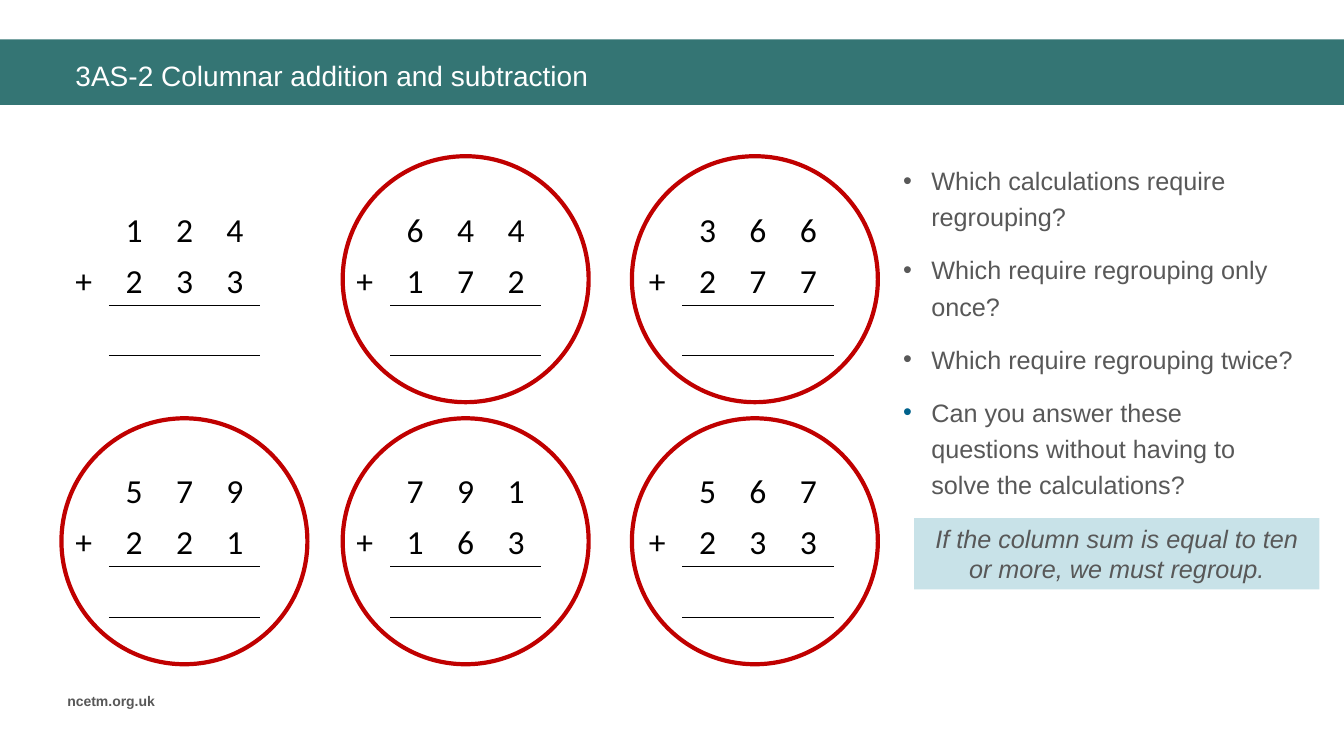
import pptx
import pptx.dml.color
import pptx.enum.shapes
import pptx.enum.text
import pptx.oxml
import pptx.oxml.ns
import pptx.util

Pt = pptx.util.Pt
ALIGN = pptx.enum.text.PP_ALIGN
MIDDLE = pptx.enum.text.MSO_ANCHOR.MIDDLE
SHAPE = pptx.enum.shapes.MSO_SHAPE
NS = pptx.oxml.ns.nsdecls("a")

COLORS = {
    "banner": "347574", "white": "FFFFFF", "grey": "585858", "black": "000000",
    "ring": "C00000", "callout": "C8E2E8", "blue": "00628C",
}
PLAIN_TABLE_STYLE = "{2D5ABB26-0587-4C30-8999-92F81FD0307C}"
CELL = 36
RING = 175.7

# Left edges of each column: the sum table and the ring around it
COLUMNS = [(41.8, 43.9), (242.6, 244.8), (451.4, 451.4)]
# Top edges of each row: the sum table and the ring around it
ROWS = [(146.2, 111.6), (332.8, 298.8)]
# Upper number, lower number, ringed when regrouping is needed
SUMS = [
    [("124", "233", False), ("644", "172", True), ("366", "277", True)],
    [("579", "221", True), ("791", "163", True), ("567", "233", True)],
]
QUESTIONS = [
    ("Which calculations require regrouping?", "grey"),
    ("Which require regrouping only once?", "grey"),
    ("Which require regrouping twice?", "grey"),
    ("Can you answer these questions without having to solve the calculations?", "blue"),
]


def rgb(name):
    return pptx.dml.color.RGBColor.from_string(COLORS[name])


def write(para, text, size=18, font="Arial", color="grey", bold=False, italic=False,
          align=ALIGN.LEFT, spacing=None, before=0, after=0):
    para.alignment = align
    para.line_spacing = spacing
    para.space_before, para.space_after = Pt(before), Pt(after)
    span = para.add_run()
    span.text = text
    span.font.size, span.font.name = Pt(size), font
    span.font.bold, span.font.italic = bold, italic
    span.font.color.rgb = rgb(color)


def add_text_box(page, left, top, width, height, anchor=pptx.enum.text.MSO_ANCHOR.TOP):
    frame = page.shapes.add_textbox(Pt(left), Pt(top), Pt(width), Pt(height)).text_frame
    frame.word_wrap = True
    frame.vertical_anchor = anchor
    return frame


def add_shape(page, kind, left, top, width, height, fill=None, line=None):
    shape = page.shapes.add_shape(kind, Pt(left), Pt(top), Pt(width), Pt(height))
    shape.shadow.inherit = False
    if fill:
        shape.fill.solid()
        shape.fill.fore_color.rgb = rgb(fill)
    else:
        shape.fill.background()
    if line:
        shape.line.color.rgb = rgb(line)
        shape.line.width = Pt(3)
    else:
        shape.line.fill.background()
    return shape


def add_banner(page, left, top, width, height):
    add_shape(page, SHAPE.RECTANGLE, left, top, width, height, fill="banner")
    title = add_text_box(page, left + 46.8, top + 8.6, width - 73, 33.8, MIDDLE)
    write(title.paragraphs[0], "3AS-2 Columnar addition and subtraction", size=20, color="white")


def add_border(cell, side):
    cell._tc.get_or_add_tcPr().append(pptx.oxml.parse_xml(
        f'<a:{side} {NS} w="{Pt(1)}"><a:solidFill><a:srgbClr val="{COLORS["black"]}"/>'
        f'</a:solidFill></a:{side}>'))


def add_sum(page, left, top, upper, lower):
    """Place a column addition with ruled lines above and below its answer row."""
    rows = [" " + upper, "+" + lower, " " * 4]
    table = page.shapes.add_table(3, 4, Pt(left), Pt(top), Pt(4 * CELL), Pt(3 * CELL)).table
    table.first_row = table.horz_banding = False
    table._tbl.tblPr.find(pptx.oxml.ns.qn("a:tableStyleId")).text = PLAIN_TABLE_STYLE
    for r, marks in enumerate(rows):
        table.rows[r].height = Pt(CELL)
        for c, mark in enumerate(marks):
            table.columns[c].width = Pt(CELL)
            cell = table.cell(r, c)
            cell.margin_left = cell.margin_right = Pt(5)
            cell.margin_top = cell.margin_bottom = 0
            cell.vertical_anchor = MIDDLE
            if c > 0 and r == 2:
                add_border(cell, "lnT")
            if c > 0 and r > 0:
                add_border(cell, "lnB")
            cell.fill.background()
            if mark.strip():
                write(cell.text_frame.paragraphs[0], mark, size=24, font="Calibri",
                      color="black", align=ALIGN.CENTER, spacing=1.07)


def add_sums(page):
    for (table_top, ring_top), sums in zip(ROWS, SUMS):
        for (table_left, ring_left), (upper, lower, ringed) in zip(COLUMNS, sums):
            if ringed:
                add_shape(page, SHAPE.OVAL, ring_left, ring_top, RING, RING, line="ring")
            add_sum(page, table_left, table_top, upper, lower)


def add_bullet(para, color):
    props = para._p.get_or_add_pPr()
    props.set("marL", str(Pt(20.2)))
    props.set("indent", str(-Pt(20.2)))
    for xml in (f'<a:buClr {NS}><a:srgbClr val="{COLORS[color]}"/></a:buClr>',
                f'<a:buFont {NS} typeface="Arial"/>',
                f'<a:buChar {NS} char="•"/>'):
        props.append(pptx.oxml.parse_xml(xml))


def add_questions(page, left, top, width, height):
    frame = add_text_box(page, left, top, width, height)
    for index, (question, bullet_color) in enumerate(QUESTIONS):
        para = frame.add_paragraph() if index else frame.paragraphs[0]
        add_bullet(para, bullet_color)
        write(para, question, spacing=1.2, before=6 if index else 0, after=6)


def add_callout(page, left, top, width, height):
    frame = add_shape(page, SHAPE.RECTANGLE, left, top, width, height, fill="callout").text_frame
    frame.word_wrap = True
    frame.vertical_anchor = MIDDLE
    write(frame.paragraphs[0], "If the column sum is equal to ten or more, we must regroup.",
          italic=True, align=ALIGN.CENTER)


def add_footer(page, left, top, width, height):
    frame = add_text_box(page, left, top, width, height)
    write(frame.paragraphs[0], "ncetm.org.uk", size=10, bold=True)


def main():
    deck = pptx.Presentation()
    deck.slide_width, deck.slide_height = Pt(960), Pt(540)
    page = deck.slides.add_slide(deck.slide_layouts[6])
    add_banner(page, 0, 28.2, 960, 46.8)
    add_footer(page, 41, 491, 87, 19.4)
    add_sums(page)
    add_callout(page, 653, 370, 289.5, 51)
    add_questions(page, 638, 110.2, 295.2, 248.4)
    deck.save("out.pptx")


if __name__ == "__main__":
    main()
